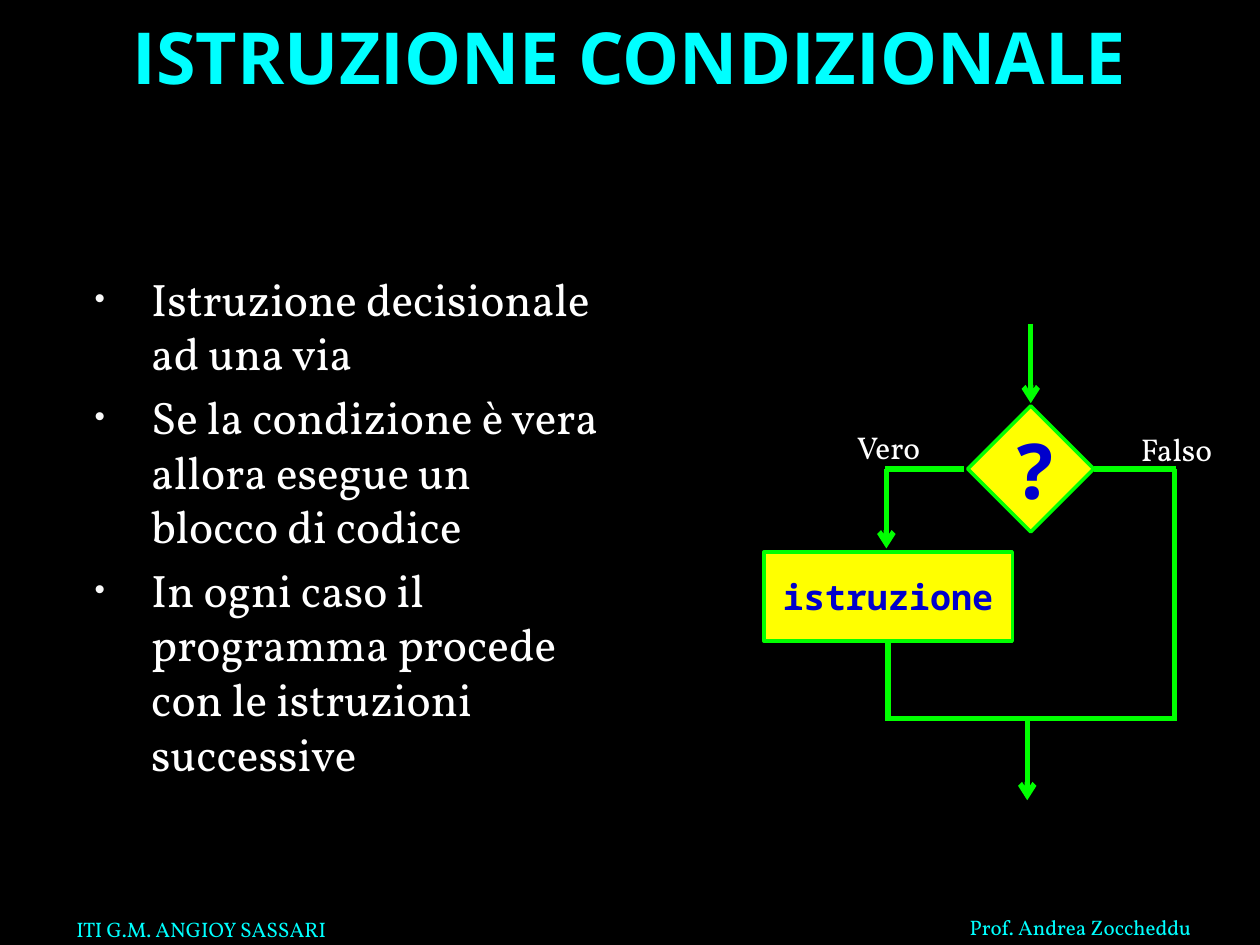
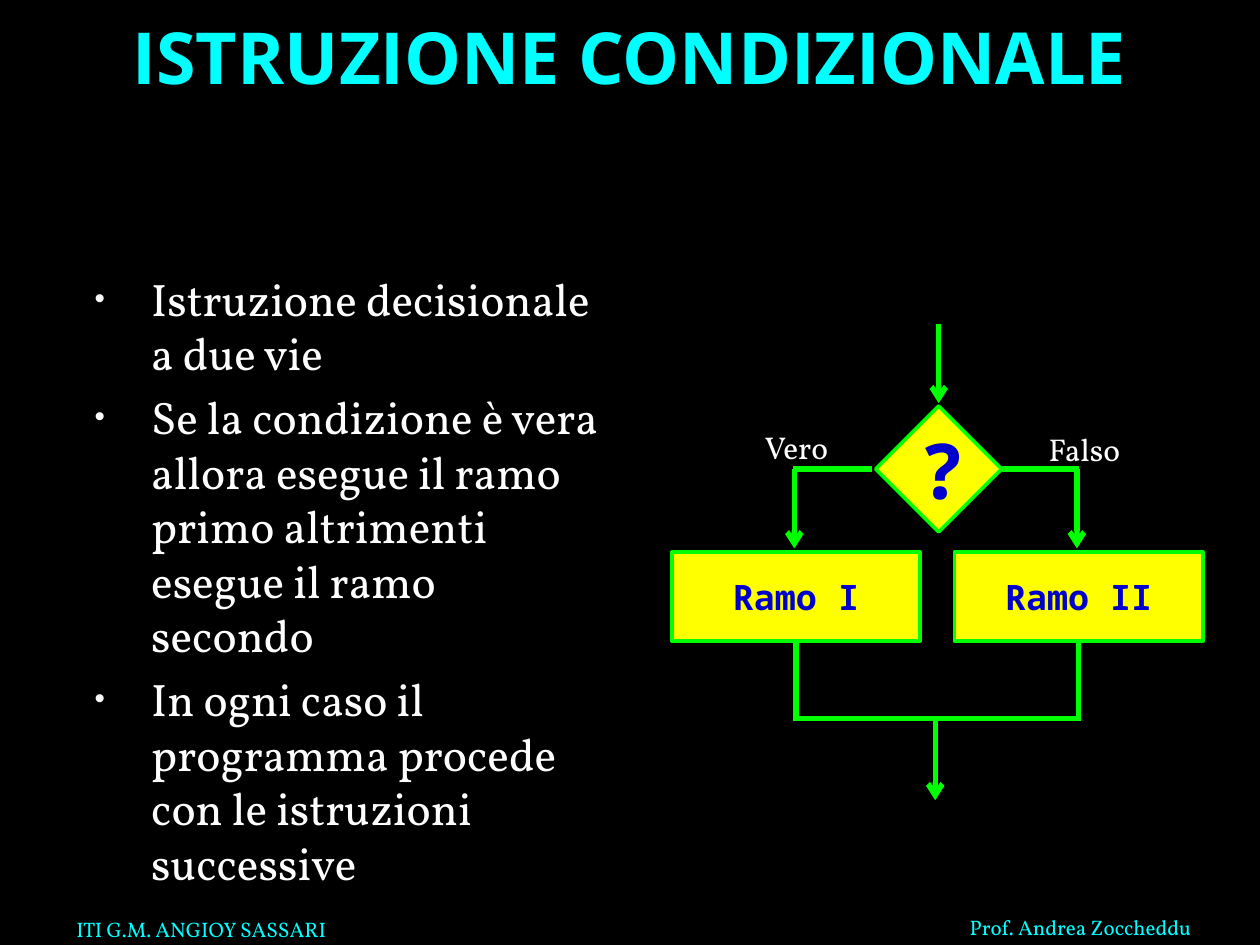
import pptx
import pptx.util
import pptx.dml.color
import pptx.enum.shapes
import pptx.enum.text
import pptx.oxml
import pptx.oxml.ns
from lxml import etree

Pt = pptx.util.Pt
MSO = pptx.enum.shapes.MSO_SHAPE
ANCHOR = pptx.enum.text.MSO_ANCHOR
ALIGN = pptx.enum.text.PP_ALIGN
qn = pptx.oxml.ns.qn

# Shared style
BLACK, WHITE, CYAN = "000000", "FFFFFF", "00FFFF"
GREEN, YELLOW, BLUE, BULLET = "00FF00", "FFFF00", "0000CC", "F9F9F9"
SERIF, SANS, MONO = "Vollkorn", "Open Sans", "Noto Sans Mono"

# Flowchart levels, from top to bottom
START_Y, TEST_Y, BRANCH_Y, BOX_Y, MERGE_Y = 185, 232, 268, 315.4, 410.4
ARROW_H, ARM, BOX_W, BOX_H = 45.4, 82, 142, 51


def rgb(color):
    return pptx.dml.color.RGBColor.from_string(color)


def sub(parent, tag, **attrs):
    return etree.SubElement(parent, qn(tag), attrs)


class Deck:
    def __init__(self):
        self.prs = pptx.Presentation()
        self.prs.slide_width, self.prs.slide_height = Pt(720), Pt(540)
        fill = self.prs.slide_master.background.fill
        fill.solid()
        fill.fore_color.rgb = rgb(BLACK)
        self.s = None

    def slide(self, title, points):
        self.s = self.prs.slides.add_slide(self.prs.slide_layouts[1])
        self.text(36.5, 512.5, 228, 29, "ITI G.M. ANGIOY SASSARI", 12, CYAN,
                  anchor=ANCHOR.BOTTOM)
        self.text(547, 519, 148, 21.6, "Prof. Andrea Zoccheddu", 12, CYAN,
                  wrap=False)
        self.title(title)
        self.bullets(points)

    def run(self, p, text, size, font, color, bold=False):
        r = p.add_run()
        r.text = text
        r.font.size, r.font.name, r.font.bold = Pt(size), font, bold
        r.font.color.rgb = rgb(color)

    def place(self, sp, x, y, w, h):
        sp.left, sp.top, sp.width, sp.height = Pt(x), Pt(y), Pt(w), Pt(h)
        tf = sp.text_frame
        tf.auto_size = pptx.enum.text.MSO_AUTO_SIZE.NONE
        tf.word_wrap = True
        tf.vertical_anchor = ANCHOR.TOP
        return tf

    def title(self, text):
        tf = self.place(self.s.shapes.title, 36, 3.6, 648, 90)
        p = tf.paragraphs[0]
        p.alignment = ALIGN.CENTER
        self.run(p, text, 41, SANS, CYAN, bold=True)

    def bullets(self, points):
        tf = self.place(self.s.placeholders[1], 36, 151.2, 318, 331)
        for i, point in enumerate(points):
            p = tf.add_paragraph() if i else tf.paragraphs[0]
            pPr = p._p.get_or_add_pPr()
            pPr.set("marL", str(Pt(43.2)))
            pPr.set("indent", str(Pt(-32.4)))
            sub(sub(pPr, "a:buClr"), "a:srgbClr", val=BULLET)
            sub(pPr, "a:buSzPct", val="65000")
            sub(pPr, "a:buChar", char="•")
            p.space_before = Pt(5.2 if i else 0)
            self.run(p, point, 26, SERIF, WHITE)

    def text(self, x, y, w, h, text, size, color, anchor=ANCHOR.TOP, wrap=True):
        tb = self.s.shapes.add_textbox(Pt(x), Pt(y), Pt(w), Pt(h))
        tf = tb.text_frame
        tf.word_wrap, tf.vertical_anchor = wrap, anchor
        self.run(tf.paragraphs[0], text, size, SERIF, color)

    def node(self, kind, x, y, w, h, text, size):
        sp = self.s.shapes.add_shape(kind, Pt(x), Pt(y), Pt(w), Pt(h))
        sp.shadow.inherit = False
        sp.fill.solid()
        sp.fill.fore_color.rgb = rgb(YELLOW)
        sp.line.color.rgb = rgb(GREEN)
        sp.line.width = Pt(2)
        tf = sp.text_frame
        tf.word_wrap, tf.vertical_anchor = True, ANCHOR.MIDDLE
        p = tf.paragraphs[0]
        p.alignment = ALIGN.CENTER
        self.run(p, text, size, MONO, BLUE, bold=True)

    def line(self, x1, y1, x2, y2, arrow=False):
        c = self.s.shapes.add_connector(
            pptx.enum.shapes.MSO_CONNECTOR.STRAIGHT, Pt(x1), Pt(y1), Pt(x2), Pt(y2))
        c.line.color.rgb = rgb(GREEN)
        c.line.width = Pt(3)
        if arrow:
            sub(c.line._get_or_add_ln(), "a:tailEnd", type="arrow")
        sub(c._element.spPr, "a:effectLst")

    def arrow_down(self, x, y):
        self.line(x, y, x, y + ARROW_H, arrow=True)

    def branch(self, x, text):
        """Arrow into a box, the box, and the line down to the merge."""
        self.arrow_down(x, BRANCH_Y)
        self.node(MSO.RECTANGLE, x - BOX_W / 2 + 1, BOX_Y, BOX_W, BOX_H, text, 20)
        self.line(x + 1, BOX_Y + BOX_H, x + 1, MERGE_Y + 1.5)

    def flowchart(self, axis, true_text, false_text=None):
        left = axis - ARM - 0.5
        right = axis + (ARM if false_text is None else 79)
        # Test with its entry
        self.node(MSO.DIAMOND, axis - 36, TEST_Y, 72, 72, "?", 44)
        self.arrow_down(axis, START_Y)
        # Arms and branches
        self.line(axis - 38, BRANCH_Y, left - 1, BRANCH_Y)
        self.line(axis + 36, BRANCH_Y, right + 1, BRANCH_Y)
        self.branch(left, true_text)
        if false_text is None:
            self.line(right, BRANCH_Y, right, MERGE_Y)
        else:
            self.branch(right, false_text)
        # Merge and exit
        self.line(left, MERGE_Y, right + 1.5, MERGE_Y)
        self.arrow_down(axis - 2, MERGE_Y + 1.5)
        # Branch labels
        self.text(axis - 106.5, 241.2, 53, 28.8, "Vero", 18, WHITE, wrap=False)
        self.text(axis + 55.8, 242, 57, 28.8, "Falso", 18, WHITE, wrap=False)


def main():
    deck = Deck()
    heading = "ISTRUZIONE CONDIZIONALE"
    closing = "In ogni caso il programma procede con le istruzioni successive"

    # One-way decision
    deck.slide(heading, [
        "Istruzione decisionale ad una via",
        "Se la condizione è vera allora esegue un blocco di codice",
        closing])
    deck.flowchart(589, "istruzione")

    # Two-way decision
    deck.slide(heading, [
        "Istruzione decisionale a due vie",
        "Se la condizione è vera allora esegue il ramo primo altrimenti "
        "esegue il ramo secondo",
        closing])
    deck.flowchart(536.4, "Ramo I", "Ramo II")

    deck.prs.save("out.pptx")


if __name__ == "__main__":
    main()
